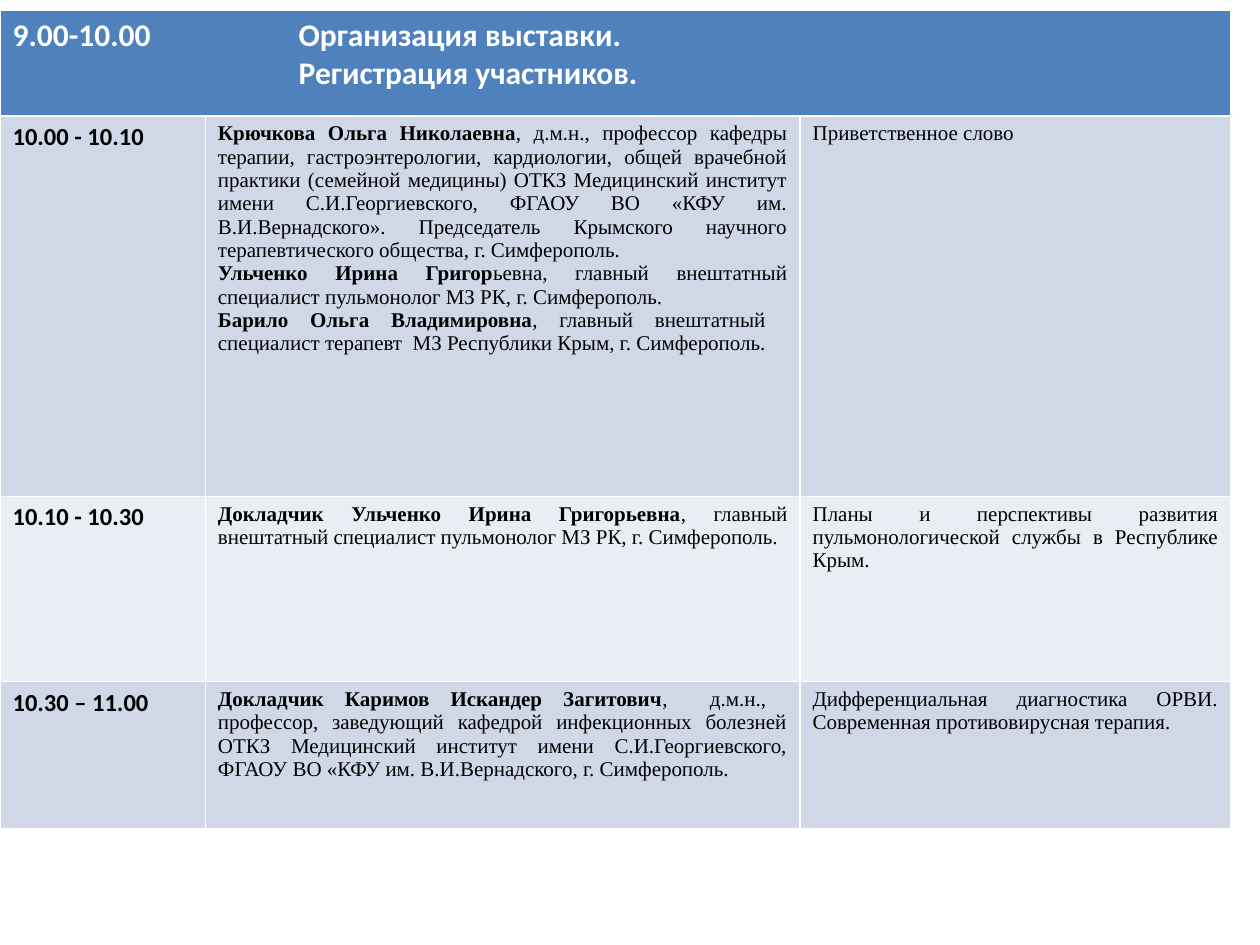
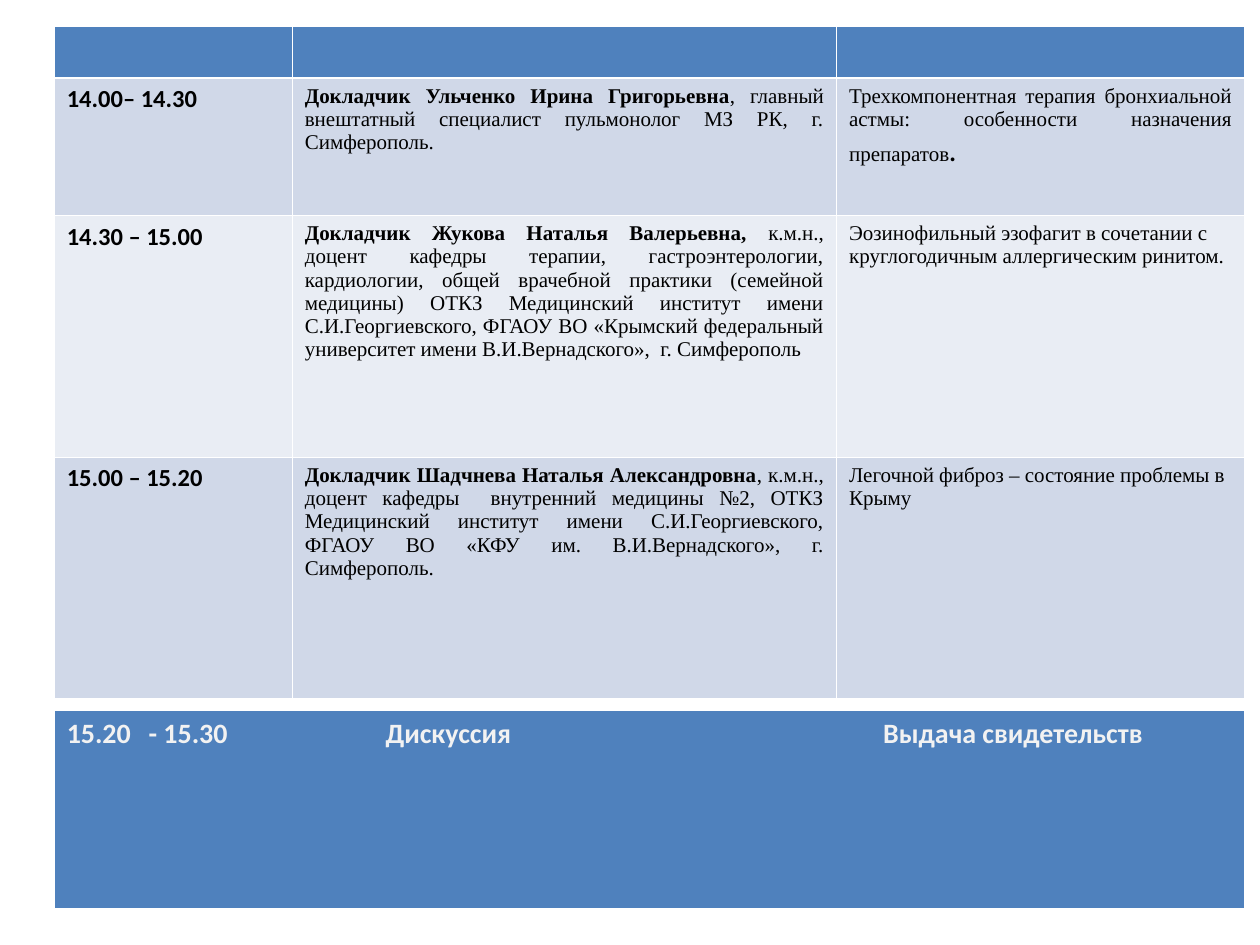
from lxml.etree import SubElement
from pptx import Presentation
from pptx.dml.color import RGBColor
from pptx.enum.text import PP_ALIGN
from pptx.oxml.ns import qn
from pptx.util import Inches, Pt

HUES = {"head": "4F81BD", "odd": "D0D8E8", "even": "E9EDF4",
        "ink": "000000", "white": "FFFFFF", "pale": "F2F2F2"}
SANS, SERIF = "Calibri", "Times New Roman"
LEFT, JUST = PP_ALIGN.LEFT, PP_ALIGN.JUSTIFY

MORNING = [
    ("10.00 - 10.10",
     [("Крючкова Ольга Николаевна",
       ", д.м.н., профессор кафедры терапии, гастроэнтерологии, кардиологии, общей "
       "врачебной практики (семейной медицины) ОТКЗ Медицинский институт имени "
       "С.И.Георгиевского, ФГАОУ ВО «КФУ им. В.И.Вернадского». Председатель Крымского "
       "научного терапевтического общества, г. Симферополь."),
      ("Ульченко Ирина Григор",
       "ьевна, главный внештатный специалист пульмонолог МЗ РК, г. Симферополь."),
      ("Барило Ольга Владимировна",
       ", главный внештатный  специалист терапевт  МЗ Республики Крым, г. Симферополь.")],
     "Приветственное слово", JUST),
    ("10.10 - 10.30",
     [("Докладчик Ульченко Ирина Григорьевна",
       ", главный внештатный специалист пульмонолог МЗ РК, г. Симферополь.")],
     "Планы и перспективы развития пульмонологической службы в Республике Крым.", JUST),
    ("10.30 – 11.00",
     [("Докладчик Каримов Искандер Загитович",
       ",  д.м.н.,  профессор, заведующий кафедрой инфекционных болезней ОТКЗ Медицинский "
       "институт имени С.И.Георгиевского, ФГАОУ ВО «КФУ им. В.И.Вернадского, "
       "г. Симферополь.")],
     "Дифференциальная диагностика ОРВИ. Современная противовирусная терапия.", JUST),
]
LATER = [
    ("14.00– 14.30",
     [("Докладчик Ульченко Ирина Григорьевна",
       ", главный внештатный специалист пульмонолог МЗ РК, г. Симферополь.")],
     "Трехкомпонентная терапия бронхиальной астмы: особенности назначения препаратов", JUST),
    ("14.30 – 15.00",
     [("Докладчик Жукова Наталья Валерьевна, ",
       "к.м.н., доцент кафедры терапии, гастроэнтерологии, кардиологии, общей врачебной "
       "практики (семейной медицины) ОТКЗ Медицинский институт имени С.И.Георгиевского, "
       "ФГАОУ ВО «Крымский федеральный университет имени В.И.Вернадского»,  "
       "г. Симферополь")],
     "Эозинофильный эзофагит в сочетании с круглогодичным аллергическим ринитом.", LEFT),
    ("15.00 – 15.20",
     [("Докладчик Шадчнева Наталья Александровна",
       ", к.м.н., доцент кафедры  внутренний медицины №2, ОТКЗ Медицинский институт имени "
       "С.И.Георгиевского, ФГАОУ ВО «КФУ им. В.И.Вернадского», г. Симферополь.")],
     "Легочной фиброз – состояние проблемы в Крыму", LEFT),
]


def style(run, size, face, bold=False, hue="ink"):
    """Set the font of a run."""
    font = run.font
    font.size, font.name, font.bold = Pt(size), face, bold
    font.color.rgb = RGBColor.from_string(HUES[hue])


def add_run(para, text, size, face):
    """Append a plain run to a paragraph."""
    run = para.add_run()
    run.text = text
    style(run, size, face)
    return run


def write(cell, lines, size, face, bold=False, hue="ink", align=LEFT):
    """Fill a cell with one paragraph per line and return the paragraphs."""
    frame = cell.text_frame
    frame.text = "\n".join(lines)
    for para in frame.paragraphs:
        para.alignment = align
        for run in para.runs:
            style(run, size, face, bold, hue)
    return frame.paragraphs


def set_tabs(para, stops):
    """Give a paragraph left tab stops, in inches."""
    tabs = SubElement(para._p.get_or_add_pPr(), qn("a:tabLst"))
    for stop in stops:
        SubElement(tabs, qn("a:tab"), pos=str(Inches(stop)), algn="l")


def add_grid(slide, left, top, cols, rows):
    """Add a table with a blue head row and two banded row colours."""
    grid = slide.shapes.add_table(
        len(rows), len(cols), Inches(left), Inches(top),
        Inches(sum(cols)), Inches(sum(rows))).table
    for col, width in zip(grid.columns, cols):
        col.width = Inches(width)
    for num, (row, height) in enumerate(zip(grid.rows, rows)):
        row.height = Inches(height)
        hue = "head" if num == 0 else "odd" if num % 2 else "even"
        for cell in row.cells:
            cell.fill.solid()
            cell.fill.fore_color.rgb = RGBColor.from_string(HUES[hue])
    return grid


def add_talks(grid, talks):
    """Write time, speakers and topic into the rows below the head."""
    for num, (time, people, topic, align) in enumerate(talks, 1):
        write(grid.cell(num, 0), [time], 14, SANS, bold=True)
        names = [name for name, post in people]
        paras = write(grid.cell(num, 1), names, 12, SERIF, bold=True, align=JUST)
        for para, (name, post) in zip(paras, people):
            add_run(para, post, 12, SERIF)
        write(grid.cell(num, 2), [topic], 12, SERIF, align=align)


def add_band(cell, lines, size, hue, stops, align=LEFT):
    """Write bold lines, set out by tab stops, on a blue band."""
    for para in write(cell, lines, size, SANS, True, hue, align):
        set_tabs(para, stops)


def build_morning(slide):
    """Build the opening part of the schedule."""
    grid = add_grid(slide, 0, 0.08, [1.63, 4.72, 3.42], [0.84, 3.02, 1.47, 1.17])
    head = grid.cell(0, 0)
    head.merge(grid.cell(0, 2))
    add_band(head, ["9.00-10.00\tОрганизация выставки.", "\tРегистрация участников."],
             18, "white", [2.27], JUST)
    add_talks(grid, MORNING)


def build_later(slide):
    """Build the closing part of the schedule."""
    grid = add_grid(slide, 0.43, 0.21, [1.89, 4.32, 3.24], [0.41, 1.09, 1.92, 1.92])
    add_talks(grid, LATER)
    topic = grid.cell(1, 2).text_frame.paragraphs[0]
    add_run(topic, ".", 18, SANS).font.italic = True
    close = add_grid(slide, 0.43, 5.64, [9.45], [1.57])
    add_band(close.cell(0, 0), ["15.20\t- 15.30\tДискуссия\tВыдача свидетельств"],
             16, "pale", [0.65, 2.53, 6.48])


def main():
    """Build and save the deck."""
    deck = Presentation()
    deck.slide_width, deck.slide_height = Inches(10), Inches(7.5)
    for build in (build_morning, build_later):
        build(deck.slides.add_slide(deck.slide_layouts[6]))
    deck.save("out.pptx")


if __name__ == "__main__":
    main()
